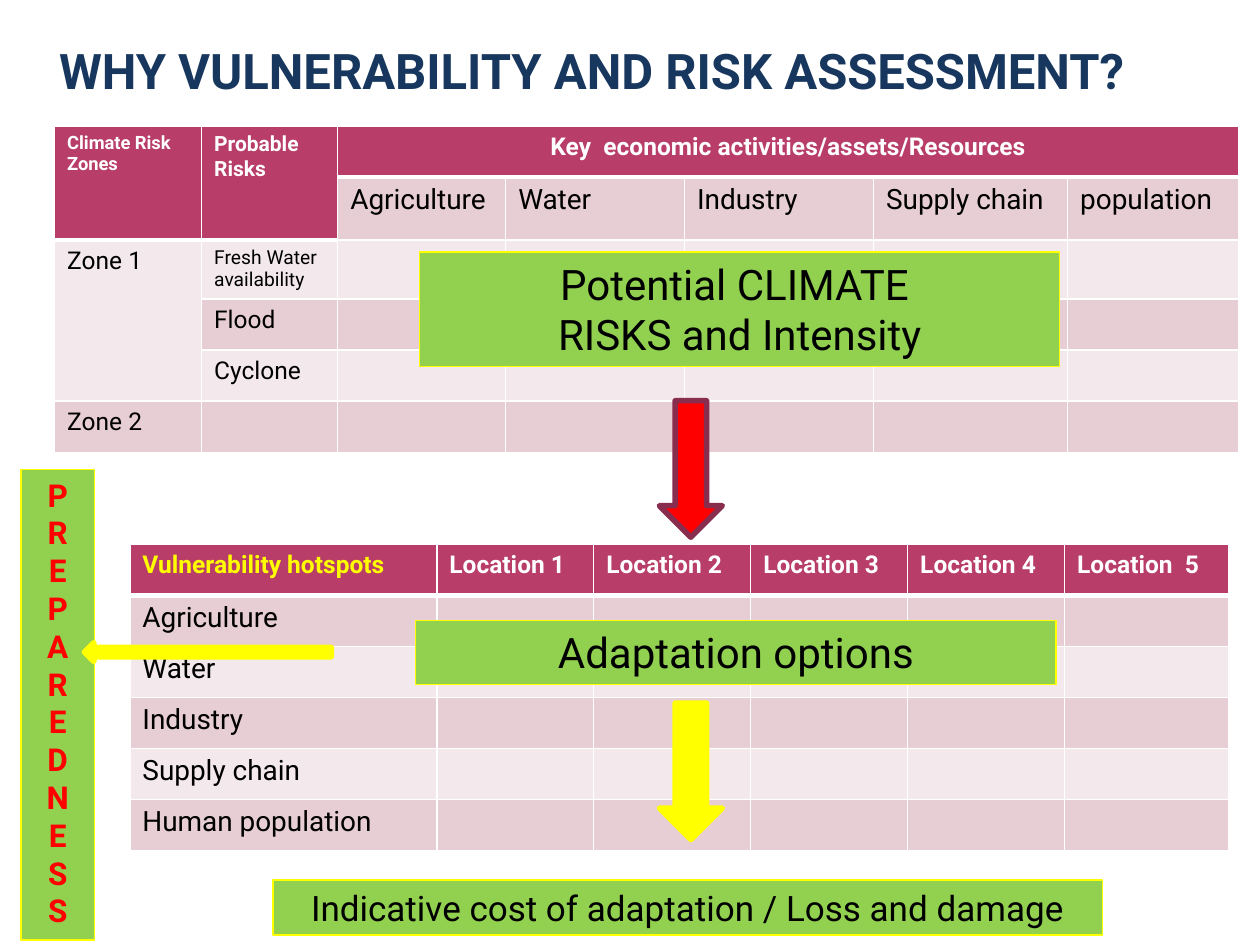
from lxml import etree
from pptx import Presentation
from pptx.dml.color import RGBColor
from pptx.enum.shapes import MSO_SHAPE
from pptx.enum.text import MSO_ANCHOR, PP_ALIGN
from pptx.oxml.ns import qn
from pptx.util import Pt

RECTANGLE = MSO_SHAPE.RECTANGLE
DOWN_ARROW = MSO_SHAPE.DOWN_ARROW
RIGHT_ARROW = MSO_SHAPE.RIGHT_ARROW
BOTTOM, TOP = MSO_ANCHOR.BOTTOM, MSO_ANCHOR.TOP
LEFT, CENTER = PP_ALIGN.LEFT, PP_ALIGN.CENTER

COLORS = {
    "navy": "17375E", "white": "FFFFFF", "black": "000000",
    "header": "B83D68", "dark band": "E6CED4", "light band": "F3E8EB",
    "green": "92D050", "yellow": "FFFF00", "red": "FF0000", "plum": "882D4D",
}


def rgb(name):
    return RGBColor.from_string(COLORS[name])


class SlideBuilder:
    font_name = "Roboto"

    def __init__(self, slide):
        self.slide = slide

    def set_text(self, text_frame, text, size, color="black", bold=False, align=LEFT):
        text_frame.text = text
        for paragraph in text_frame.paragraphs:
            paragraph.alignment = align
            for run in paragraph.runs:
                run.font.name = self.font_name
                run.font.size = Pt(size)
                run.font.bold = bold
                run.font.color.rgb = rgb(color)

    def title(self, left, top, width, height, text):
        text_frame = self.slide.shapes.add_textbox(
            Pt(left), Pt(top), Pt(width), Pt(height)).text_frame
        text_frame.word_wrap = True
        text_frame.vertical_anchor = BOTTOM
        text_frame.margin_left = text_frame.margin_right = Pt(3.6)
        text_frame.margin_top = text_frame.margin_bottom = 0
        self.set_text(text_frame, text, 28, "navy", True)

    def shape(self, kind, left, top, width, height, fill, line, line_width):
        shape = self.slide.shapes.add_shape(
            kind, Pt(left), Pt(top), Pt(width), Pt(height))
        shape.shadow.inherit = False
        shape.fill.solid()
        shape.fill.fore_color.rgb = rgb(fill)
        shape.line.color.rgb = rgb(line)
        shape.line.width = Pt(line_width)
        return shape

    def label(self, left, top, width, height, text, size, color="black", bold=False):
        shape = self.shape(RECTANGLE, left, top, width, height, "green", "yellow", 0.75)
        shape.text_frame.word_wrap = True
        shape.text_frame.vertical_anchor = TOP
        self.set_text(shape.text_frame, text, size, color, bold, CENTER)

    def arrow(self, kind, left, top, width, height, fill, line, rotation=0):
        shape = self.shape(kind, left, top, width, height, fill, line, 3.15)
        shape.rotation = rotation

    def borders(self, cell, bottom_width):
        properties = cell._tc.get_or_add_tcPr()
        for side, width in (("L", 1), ("R", 1), ("T", 1), ("B", bottom_width)):
            line = etree.SubElement(properties, qn("a:ln" + side), w=str(Pt(width)))
            fill = etree.SubElement(line, qn("a:solidFill"))
            etree.SubElement(fill, qn("a:srgbClr"), val=COLORS["white"])

    def table(self, left, top, widths, heights, texts, merges=()):
        """Texts map (row, column) to (text, size, color, bold, align)."""
        table = self.slide.shapes.add_table(
            len(heights), len(widths), Pt(left), Pt(top),
            Pt(sum(widths)), Pt(sum(heights))).table
        table.first_row = table.horz_banding = False
        for column, width in zip(table.columns, widths):
            column.width = Pt(width)
        for row, height in zip(table.rows, heights):
            row.height = Pt(height)

        header_cells = {(0, column) for column in range(len(widths))}
        for first, last in merges:
            table.cell(*first).merge(table.cell(*last))
            if first[0] == 0:
                header_cells.add(last)

        for row in range(len(heights)):
            for column in range(len(widths)):
                cell = table.cell(row, column)
                is_header = (row, column) in header_cells
                band = "dark band" if row % 2 else "light band"
                self.borders(cell, 3 if is_header else 1)
                cell.fill.solid()
                cell.fill.fore_color.rgb = rgb("header" if is_header else band)
                if (row, column) in texts:
                    self.set_text(cell.text_frame, *texts[row, column])


def main():
    presentation = Presentation()
    presentation.slide_width, presentation.slide_height = Pt(720), Pt(540)
    builder = SlideBuilder(presentation.slides.add_slide(presentation.slide_layouts[6]))

    builder.title(30.2, 12.2, 648, 44.6, "WHY VULNERABILITY AND RISK ASSESSMENT?")

    # Climate risks by zone
    risk_texts = {
        (0, 0): ("Climate Risk Zones", 10.5, "white", True),
        (0, 1): ("Probable Risks", 12, "white", True),
        (0, 2): ("Key  economic activities/assets/Resources", 14, "white", True, CENTER),
        (2, 0): ("Zone 1", 14),
        (2, 1): ("Fresh Water availability", 11),
        (3, 1): ("Flood", 14),
        (4, 1): ("Cyclone", 14),
        (5, 0): ("Zone 2", 14),
    }
    assets = ["Agriculture", "Water", "Industry", "Supply chain", "population"]
    for column, asset in enumerate(assets, 2):
        risk_texts[1, column] = (asset, 16)
    builder.table(
        31.2, 72, [84, 77.8, 96, 102.2, 108, 110.9, 97.8],
        [29.2, 34.9, 33.1, 29.2, 29.2, 29.2], risk_texts,
        [((0, 0), (1, 0)), ((0, 1), (1, 1)), ((0, 2), (0, 6)), ((2, 0), (4, 0))])
    builder.label(239.8, 144, 365.8, 65.5, "Potential CLIMATE \nRISKS and Intensity", 24)

    # Vulnerability hotspots by location
    hotspot_texts = {(0, 0): ("Vulnerability hotspots", 14, "yellow", True)}
    locations = ["Location 1", "Location 2", "Location 3", "Location 4", "Location  5"]
    for column, location in enumerate(locations, 1):
        hotspot_texts[0, column] = (location, 14, "white", True)
    hotspots = ["Agriculture", "Water", "Industry", "Supply chain", "Human population"]
    for row, hotspot in enumerate(hotspots, 1):
        hotspot_texts[row, 0] = (hotspot, 16)
    builder.table(74.2, 311, [175.4] + [89.7] * 4 + [94], [29.2] * 6, hotspot_texts)

    # Adaptation and its cost
    builder.label(237.6, 354.6, 365.8, 36.4, "Adaptation options", 24)
    builder.label(156, 502.8, 474, 31.5,
                  "Indicative cost of adaptation / Loss and damage", 20)
    builder.arrow(DOWN_ARROW, 376.8, 229, 36, 78, "red", "plum")
    builder.arrow(DOWN_ARROW, 376.8, 401.8, 36, 78, "yellow", "yellow")

    # Preparedness column
    builder.label(12, 268.2, 42, 269, "\n".join("PREPAREDNESS"), 18, "red", True)
    builder.arrow(RIGHT_ARROW, 48.2, 367.2, 141.1, 10.8, "yellow", "yellow", 180)

    presentation.save("out.pptx")


if __name__ == "__main__":
    main()
